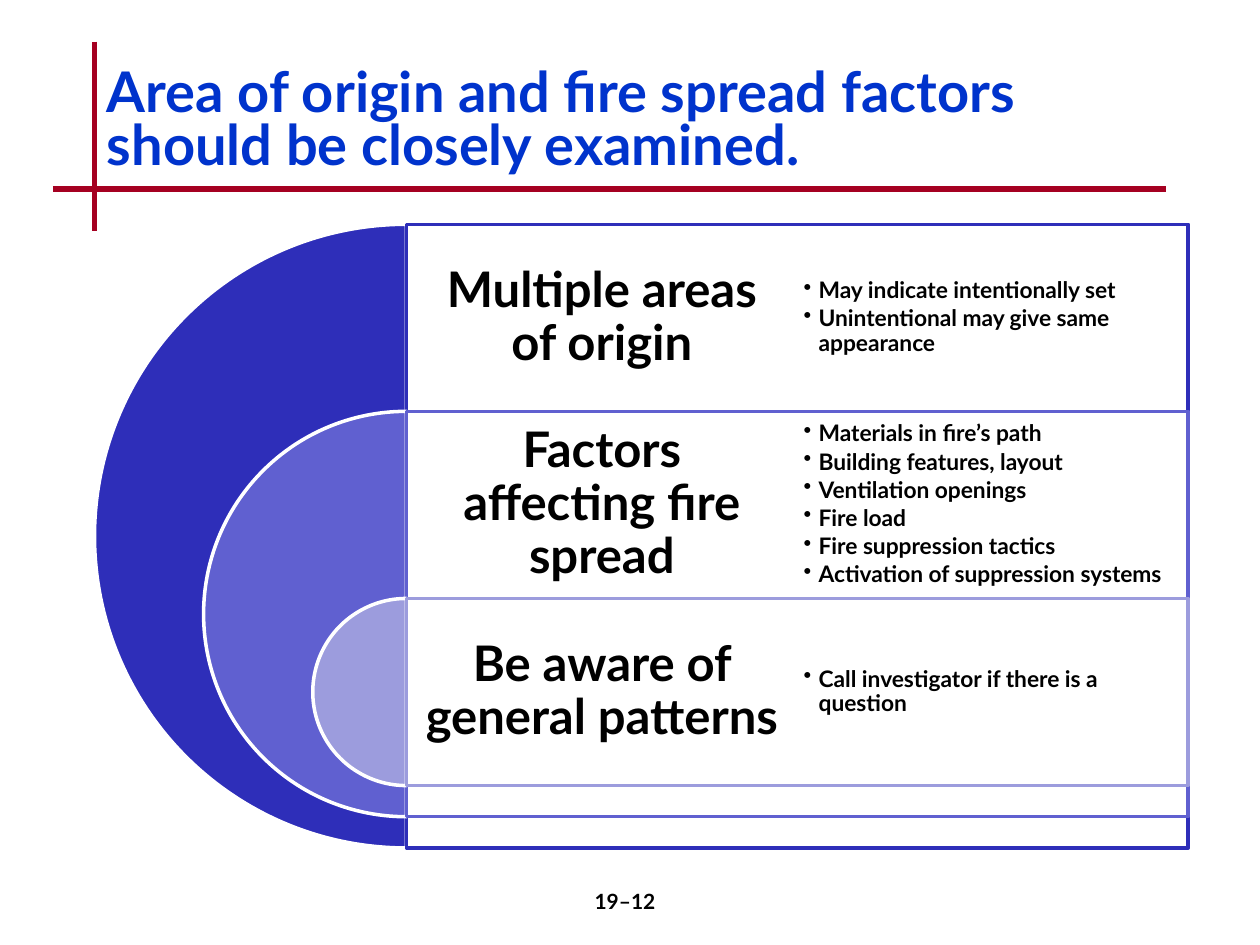
from dataclasses import dataclass

from lxml.etree import SubElement
from pptx import Presentation
from pptx.dml.color import RGBColor
from pptx.enum.shapes import MSO_CONNECTOR, MSO_SHAPE
from pptx.enum.text import MSO_ANCHOR, PP_ALIGN
from pptx.oxml.ns import qn
from pptx.util import Inches, Pt


@dataclass(frozen=True)
class Theme:
    font: str = "Lato"
    ink: str = "000000"
    paper: str = "FFFFFF"
    title: str = "0033CC"
    rule: str = "A50021"
    rings: tuple = ("2E2EB9", "6060D0", "9C9CDD")
    title_size: int = 32
    head_size: int = 28
    item_size: int = 13
    page_size: int = 12
    rule_width: int = 3
    edge_width: int = 2


THEME = Theme()

ROWS = [
    ("Multiple areas of origin", [
        "May indicate intentionally set",
        "Unintentional may give same appearance",
    ]),
    ("Factors affecting fire spread", [
        "Materials in fire’s path",
        "Building features, layout",
        "Ventilation openings",
        "Fire load",
        "Fire suppression tactics",
        "Activation of suppression systems",
    ]),
    ("Be aware of general patterns", [
        "Call investigator if there is a question",
    ]),
]


def color(code):
    return RGBColor.from_string(code)


def add_rule(slide, x1, y1, x2, y2):
    line = slide.shapes.add_connector(
        MSO_CONNECTOR.STRAIGHT, Inches(x1), Inches(y1), Inches(x2), Inches(y2))
    line.line.color.rgb = color(THEME.rule)
    line.line.width = Pt(THEME.rule_width)
    SubElement(line._element.spPr, qn("a:effectLst"))


def add_shape(slide, kind, box, fill, edge):
    shape = slide.shapes.add_shape(kind, *map(Inches, box))
    shape.shadow.inherit = False
    shape.fill.solid()
    shape.fill.fore_color.rgb = color(fill)
    shape.line.color.rgb = color(edge)
    shape.line.width = Pt(THEME.edge_width)
    return shape


def set_alpha(shape, percent):
    code = shape._element.spPr.find(qn("a:solidFill"))[0]
    SubElement(code, qn("a:alpha"), val=str(percent * 1000))


def add_bullet(para):
    props = para._p.get_or_add_pPr()
    indent = Inches(0.12)
    props.set("marL", str(indent))
    props.set("indent", str(-indent))
    SubElement(props, qn("a:buChar"), char="•")


def add_text(slide, box, lines, size, ink=THEME.ink, align=PP_ALIGN.LEFT,
             anchor=MSO_ANCHOR.TOP, inset=None, spacing=None, after=0,
             bullet=False):
    frame = slide.shapes.add_textbox(*map(Inches, box)).text_frame
    frame.word_wrap = True
    frame.vertical_anchor = anchor
    if inset is not None:
        frame.margin_left = frame.margin_right = Inches(inset)
        frame.margin_top = frame.margin_bottom = Inches(inset)
    for i, line in enumerate(lines):
        para = frame.add_paragraph() if i else frame.paragraphs[0]
        if bullet:
            add_bullet(para)
        para.alignment = align
        para.line_spacing = spacing
        para.space_after = Pt(after)
        run = para.add_run()
        run.text = line
        run.font.name = THEME.font
        run.font.size = Pt(size)
        run.font.bold = True
        run.font.color.rgb = color(ink)


def add_header(slide, box):
    """Title above two crossing rules."""
    left, top, width, height = box
    base = top + height
    add_rule(slide, left, 0.33, left, base + 0.33)
    add_rule(slide, left - 0.33, base, 9.25, base)
    add_text(slide, box,
             ["Area of origin and fire spread factors should be closely examined."],
             THEME.title_size, THEME.title, spacing=0.8)


def add_target(slide, box):
    """Nested half discs, each opening into a row of heading and bullets."""
    left, top, width, height = box
    axis = left + height / 2
    row = height * 0.3
    panel = left + width - axis
    half = panel / 2
    for i, ((head, items), tone) in enumerate(zip(ROWS, THEME.rings)):
        y = top + i * row
        size = height * (1 - 0.35 * i)
        disc = add_shape(slide, MSO_SHAPE.PIE, (axis - size / 2, y, size, size),
                         tone, THEME.paper)
        # Angles of 90 and 270 degrees leave the left half
        disc.adjustments[0] = 54
        disc.adjustments[1] = 162
        card = add_shape(slide, MSO_SHAPE.RECTANGLE, (axis, y, panel, size),
                         THEME.paper, tone)
        set_alpha(card, 90)
        add_text(slide, (axis, y, half, row), [head], THEME.head_size,
                 align=PP_ALIGN.CENTER, anchor=MSO_ANCHOR.MIDDLE,
                 inset=0.12, spacing=0.9)
        add_text(slide, (axis + half, y, half, row), items, THEME.item_size,
                 anchor=MSO_ANCHOR.MIDDLE, inset=0.05, spacing=0.9, after=2,
                 bullet=True)


def add_footer(slide, box):
    add_text(slide, box, ["19–12"], THEME.page_size, align=PP_ALIGN.CENTER)


def main():
    deck = Presentation()
    deck.slide_width, deck.slide_height = Inches(10), Inches(7.5)
    slide = deck.slides.add_slide(deck.slide_layouts[6])
    add_header(slide, (0.75, 0.5, 8.69, 1))
    add_target(slide, (0.75, 1.78, 8.68, 4.95))
    add_footer(slide, (3.92, 7, 2.08, 0.5))
    deck.save("out.pptx")


if __name__ == "__main__":
    main()
